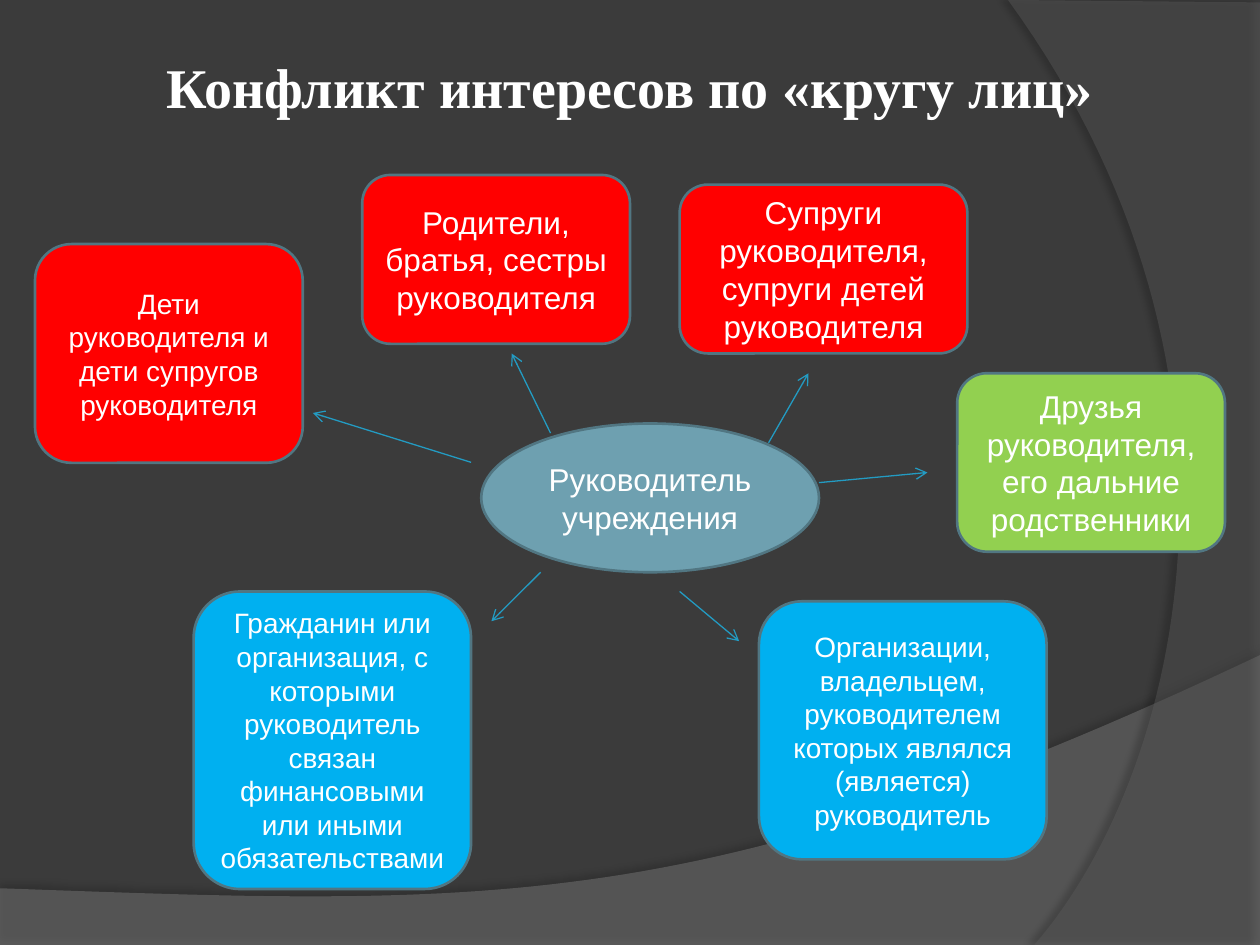
from dataclasses import dataclass

from lxml.etree import SubElement
from pptx import Presentation
from pptx.dml.color import RGBColor
from pptx.enum.shapes import MSO_CONNECTOR, MSO_SHAPE
from pptx.enum.text import MSO_ANCHOR, PP_ALIGN
from pptx.oxml.ns import qn
from pptx.util import Pt

Point = tuple[float, float]


@dataclass(frozen=True)
class Theme:
    background: str = "3B3B3B"
    white: str = "FFFFFF"
    hub: str = "6EA0B0"
    family: str = "FF0000"
    friends: str = "92D050"
    business: str = "00B0F0"
    outline: str = "517682"
    arrow: str = "239BC2"
    title_font: str = "Times New Roman"
    body_font: str = "Arial"
    title_size: float = 32
    large: float = 18
    small: float = 16


@dataclass(frozen=True)
class Node:
    text: str
    left: float
    top: float
    width: float
    height: float
    fill: str
    size: float
    preset: MSO_SHAPE = MSO_SHAPE.ROUNDED_RECTANGLE


@dataclass(frozen=True)
class Arrow:
    start: Point
    end: Point


@dataclass(frozen=True)
class Wave:
    points: list[Point]
    fill: str
    opacity: int
    shadow_opacity: int
    shadow_distance: float
    shadow_angle: int


def bezier(a: Point, b: Point, c: Point, d: Point, steps: int = 60) -> list[Point]:
    """Points along a cubic curve, both ends included."""
    def at(t: float, axis: int) -> float:
        u = 1 - t
        return (u**3 * a[axis] + 3 * u * u * t * b[axis]
                + 3 * u * t * t * c[axis] + t**3 * d[axis])
    return [(at(i / steps, 0), at(i / steps, 1)) for i in range(steps + 1)]


THEME = Theme()
TITLE = "Конфликт интересов по «кругу лиц»"

WAVES = [
    Wave([(0, 540), (720, 540),
          *bezier((720, 374.4), (402.5, 524.9), (281.5, 517.7), (0, 507.6))],
         "7F7F7F", 45, 35, 3.5, 270),
    Wave([(720, 1.4), (720, 540),
          *bezier((591, 540), (673.2, 445.7), (733, 216), (576, 0))],
         "5E5E5E", 40, 45, 4, 180),
]

NODES = [
    Node("Руководитель учреждения", 275, 242, 193, 85, THEME.hub, THEME.large,
         MSO_SHAPE.OVAL),
    Node("Дети руководителя и дети супругов руководителя",
         20, 139.5, 153, 125, THEME.family, THEME.small),
    Node("Супруги руководителя, супруги детей руководителя",
         388.4, 105.5, 164.4, 96.5, THEME.family, THEME.large),
    Node("Родители, братья, сестры руководителя",
         207, 100, 153, 96.5, THEME.family, THEME.large),
    Node("Друзья руководителя, его дальние родственники",
         547, 213.3, 153, 102, THEME.friends, THEME.large),
    Node("Гражданин или организация, с которыми руководитель связан "
         "финансовыми или иными обязательствами",
         110.7, 338, 158.5, 170, THEME.business, THEME.small),
    Node("Организации, владельцем, руководителем которых являлся (является) "
         "руководитель",
         433.7, 343.6, 164.4, 147.5, THEME.business, THEME.small),
]

ARROWS = [
    Arrow((314.6, 247.5), (292.4, 202)),
    Arrow((439.2, 253), (462, 213.3)),
    Arrow((269.2, 264.2), (178.8, 236)),
    Arrow((309, 327), (280.8, 355)),
    Arrow((388.4, 338), (422.4, 366.4)),
    Arrow((468, 275.8), (530, 270)),
]


def color(value: str) -> RGBColor:
    return RGBColor.from_string(value)


def write(frame, text: str, font: str, size: float, bold: bool = False) -> None:
    frame.word_wrap = True
    frame.vertical_anchor = MSO_ANCHOR.MIDDLE
    paragraph = frame.paragraphs[0]
    paragraph.alignment = PP_ALIGN.CENTER
    run = paragraph.add_run()
    run.text = text
    run.font.name = font
    run.font.size = Pt(size)
    run.font.bold = bold
    run.font.color.rgb = color(THEME.white)


def draw_wave(slide, wave: Wave) -> None:
    first, *rest = [(Pt(x), Pt(y)) for x, y in wave.points]
    builder = slide.shapes.build_freeform(*first)
    builder.add_line_segments(rest, close=True)
    band = builder.convert_to_shape()
    band.fill.solid()
    band.fill.fore_color.rgb = color(wave.fill)
    band.line.fill.background()
    band.shadow.inherit = False
    # Transparency and soft edge shadow
    properties = band._element.spPr
    fill = properties.find(qn("a:solidFill")).find(qn("a:srgbClr"))
    SubElement(fill, qn("a:alpha"), val=str(wave.opacity * 1000))
    shadow = SubElement(properties.find(qn("a:effectLst")), qn("a:outerShdw"),
                        blurRad=str(Pt(4)), dist=str(Pt(wave.shadow_distance)),
                        dir=str(wave.shadow_angle * 60000), rotWithShape="0")
    tint = SubElement(shadow, qn("a:srgbClr"), val="000000")
    SubElement(tint, qn("a:alpha"), val=str(wave.shadow_opacity * 1000))


def draw_node(slide, node: Node) -> None:
    box = slide.shapes.add_shape(node.preset, Pt(node.left), Pt(node.top),
                                 Pt(node.width), Pt(node.height))
    box.shadow.inherit = False
    box.fill.solid()
    box.fill.fore_color.rgb = color(node.fill)
    box.line.color.rgb = color(THEME.outline)
    box.line.width = Pt(1.5)
    write(box.text_frame, node.text, THEME.body_font, node.size)


def draw_arrow(slide, arrow: Arrow) -> None:
    ends = [Pt(value) for value in (*arrow.start, *arrow.end)]
    link = slide.shapes.add_connector(MSO_CONNECTOR.STRAIGHT, *ends)
    link.line.color.rgb = color(THEME.arrow)
    link.line.width = Pt(0.75)
    properties = link._element.spPr
    SubElement(properties.find(qn("a:ln")), qn("a:tailEnd"), type="arrow")
    SubElement(properties, qn("a:effectLst"))


def draw_title(slide) -> None:
    heading = slide.shapes.title
    heading.left, heading.top = Pt(36), Pt(21.6)
    heading.width, heading.height = Pt(648), Pt(55.4)
    frame = heading.text_frame
    frame.margin_left = frame.margin_right = Pt(3.6)
    frame.margin_top = frame.margin_bottom = Pt(3.6)
    write(frame, TITLE, THEME.title_font, THEME.title_size, bold=True)
    # Bring the title in front of the background waves
    slide.shapes._spTree.append(heading._element)


def main() -> None:
    deck = Presentation()
    deck.slide_width, deck.slide_height = Pt(720), Pt(540)
    slide = deck.slides.add_slide(deck.slide_layouts[5])
    slide.background.fill.solid()
    slide.background.fill.fore_color.rgb = color(THEME.background)

    # Background, then title, then the diagram
    for wave in WAVES:
        draw_wave(slide, wave)
    draw_title(slide)
    for node in NODES:
        draw_node(slide, node)
    for arrow in ARROWS:
        draw_arrow(slide, arrow)
    deck.save("out.pptx")


if __name__ == "__main__":
    main()
